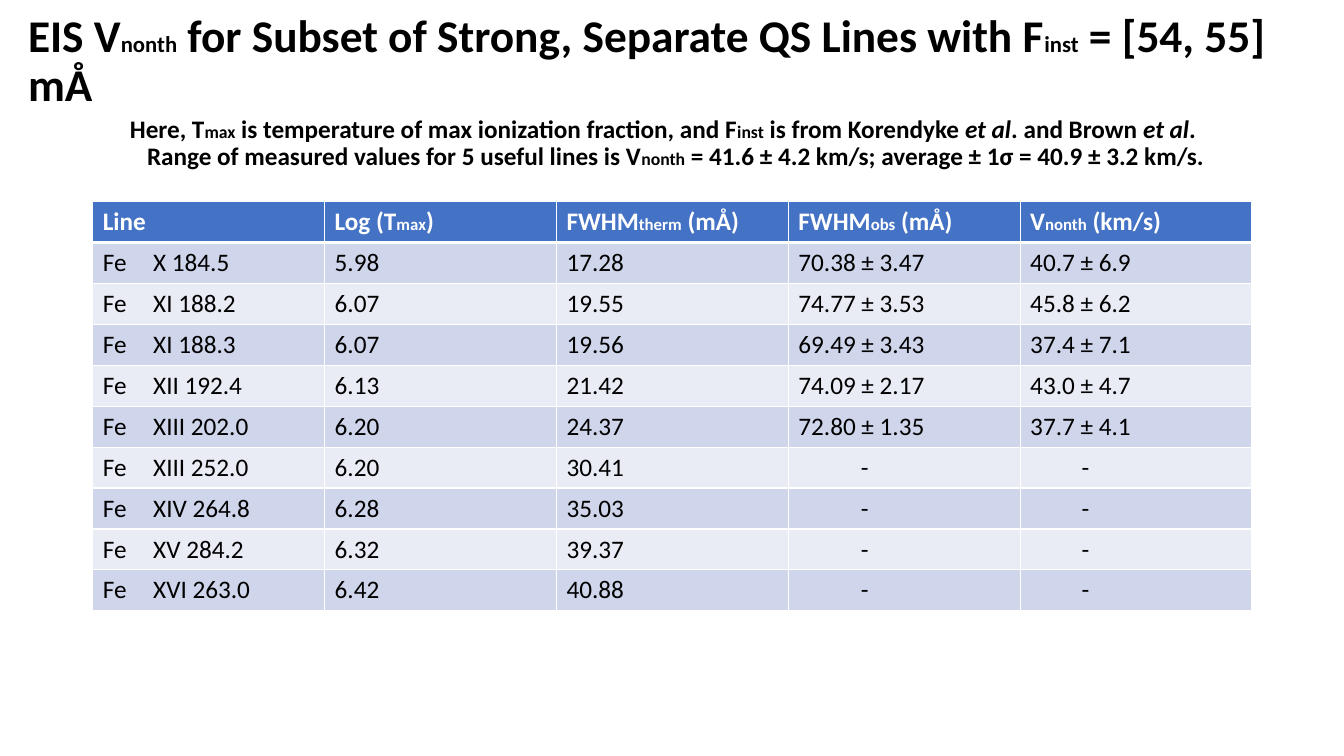
from dataclasses import dataclass

from lxml.etree import SubElement
from pptx import Presentation
from pptx.dml.color import RGBColor
from pptx.enum.text import MSO_ANCHOR as Anchor
from pptx.oxml.ns import qn
from pptx.util import Inches, Pt


@dataclass(frozen=True)
class Theme:
    font: str = "Calibri"
    ink: str = "000000"
    paper: str = "FFFFFF"
    header: str = "4472C4"
    bands: tuple = ("CFD5EA", "E9EBF5")
    title: tuple = (32.4, 16.2)
    note: tuple = (18, 12.6)
    cell: tuple = (18, 12)
    rule: float = 1
    header_rule: float = 3


class SlideBuilder:
    """Draws styled elements placed by percentages of the slide size."""

    def __init__(self, deck, theme):
        self.deck, self.theme = deck, theme
        self.slide = deck.slides.add_slide(deck.slide_layouts[6])

    def place(self, left, top, width, height):
        across, down = self.deck.slide_width / 100, self.deck.slide_height / 100
        return int(left * across), int(top * down), int(width * across), int(height * down)

    def add_runs(self, paragraph, marked, sizes, color, bold, indent=0):
        paragraph._p.get_or_add_pPr().set("marL", str(Inches(indent)))
        paragraph._p.get_or_add_pPr().set("indent", "0")
        for level, part in enumerate(marked.split("|")):
            for slant, words in enumerate(part.split("*")):
                if words:
                    run = paragraph.add_run()
                    run.text = words
                    run.font.name = self.theme.font
                    run.font.size = Pt(sizes[level % 2])
                    run.font.bold = bold
                    run.font.italic = slant % 2 == 1
                    run.font.color.rgb = RGBColor.from_string(color)

    def heading(self, area, lines):
        frame = self.slide.shapes.add_textbox(*self.place(*area)).text_frame
        frame.word_wrap = True
        frame.vertical_anchor = Anchor.MIDDLE
        for number, (marked, sizes, indent, before) in enumerate(lines):
            paragraph = frame.add_paragraph() if number else frame.paragraphs[0]
            paragraph.line_spacing = 0.9
            paragraph.space_before = Pt(before)
            self.add_runs(paragraph, marked, sizes, self.theme.ink, True, indent)

    def border(self, cell, side, width):
        edge = SubElement(cell._tc.get_or_add_tcPr(), qn(f"a:ln{side}"), w=str(Pt(width)))
        fill = SubElement(edge, qn("a:solidFill"))
        SubElement(fill, qn("a:srgbClr"), val=self.theme.paper)

    def table(self, area, headings, records, line_tab, dash_indents):
        theme = self.theme
        rows = [headings, *records]
        grid = self.slide.shapes.add_table(len(rows), len(headings), *self.place(*area)).table
        for row, values in enumerate(rows):
            fill = theme.bands[(row - 1) % 2] if row else theme.header
            widths = {"L": theme.rule, "R": theme.rule,
                      "T": theme.header_rule if row == 1 else theme.rule,
                      "B": theme.rule if row else theme.header_rule}
            for column, value in enumerate(values):
                cell = grid.cell(row, column)
                for side, width in widths.items():
                    self.border(cell, side, width)
                cell.fill.solid()
                cell.fill.fore_color.rgb = RGBColor.from_string(fill)
                paragraph = cell.text_frame.paragraphs[0]
                if "\t" in value:
                    stops = SubElement(paragraph._p.get_or_add_pPr(), qn("a:tabLst"))
                    SubElement(stops, qn("a:tab"), pos=str(Inches(line_tab)), algn="r")
                indent = dash_indents[column] if value == "-" else 0
                self.add_runs(paragraph, value, theme.cell,
                              theme.ink if row else theme.paper, row == 0, indent)


HEADINGS = ("Line", "Log (T|max|)", "FWHM|therm| (mÅ)", "FWHM|obs| (mÅ)", "V|nonth| (km/s)")
RECORDS = (
    ("Fe\tX 184.5", "5.98", "17.28", "70.38 ± 3.47", "40.7 ± 6.9"),
    ("Fe\tXI 188.2", "6.07", "19.55", "74.77 ± 3.53", "45.8 ± 6.2"),
    ("Fe\tXI 188.3", "6.07", "19.56", "69.49 ± 3.43", "37.4 ± 7.1"),
    ("Fe\tXII 192.4", "6.13", "21.42", "74.09 ± 2.17", "43.0 ± 4.7"),
    ("Fe\tXIII 202.0", "6.20", "24.37", "72.80 ± 1.35", "37.7 ± 4.1"),
    ("Fe\tXIII 252.0", "6.20", "30.41", "-", "-"),
    ("Fe\tXIV 264.8", "6.28", "35.03", "-", "-"),
    ("Fe\tXV 284.2", "6.32", "39.37", "-", "-"),
    ("Fe\tXVI 263.0", "6.42", "40.88", "-", "-"),
)


def main():
    theme = Theme()
    deck = Presentation()
    deck.slide_width, deck.slide_height = Inches(13.33), Inches(7.5)
    builder = SlideBuilder(deck, theme)
    builder.heading((1.35, 1.33, 98.65, 21.73), (
        ("EIS V|nonth| for Subset of Strong, Separate QS Lines with F|inst| = [54, 55] mÅ",
         theme.title, 0, 0),
        ("Here, T|max| is temperature of max ionization fraction, and F|inst"
         "| is from Korendyke *et al*. and Brown *et al*.", theme.note, 1.01, 4),
        ("Range of measured values for 5 useful lines is V|nonth"
         "| = 41.6 ± 4.2 km/s; average ± 1σ = 40.9 ± 3.2 km/s.", theme.note, 1.18, 0),
    ))
    builder.table((6.9, 26.67, 86.27, 54.13), HEADINGS, RECORDS,
                  line_tab=1.29, dash_indents={3: 0.62, 4: 0.51})
    deck.save("out.pptx")


if __name__ == "__main__":
    main()
